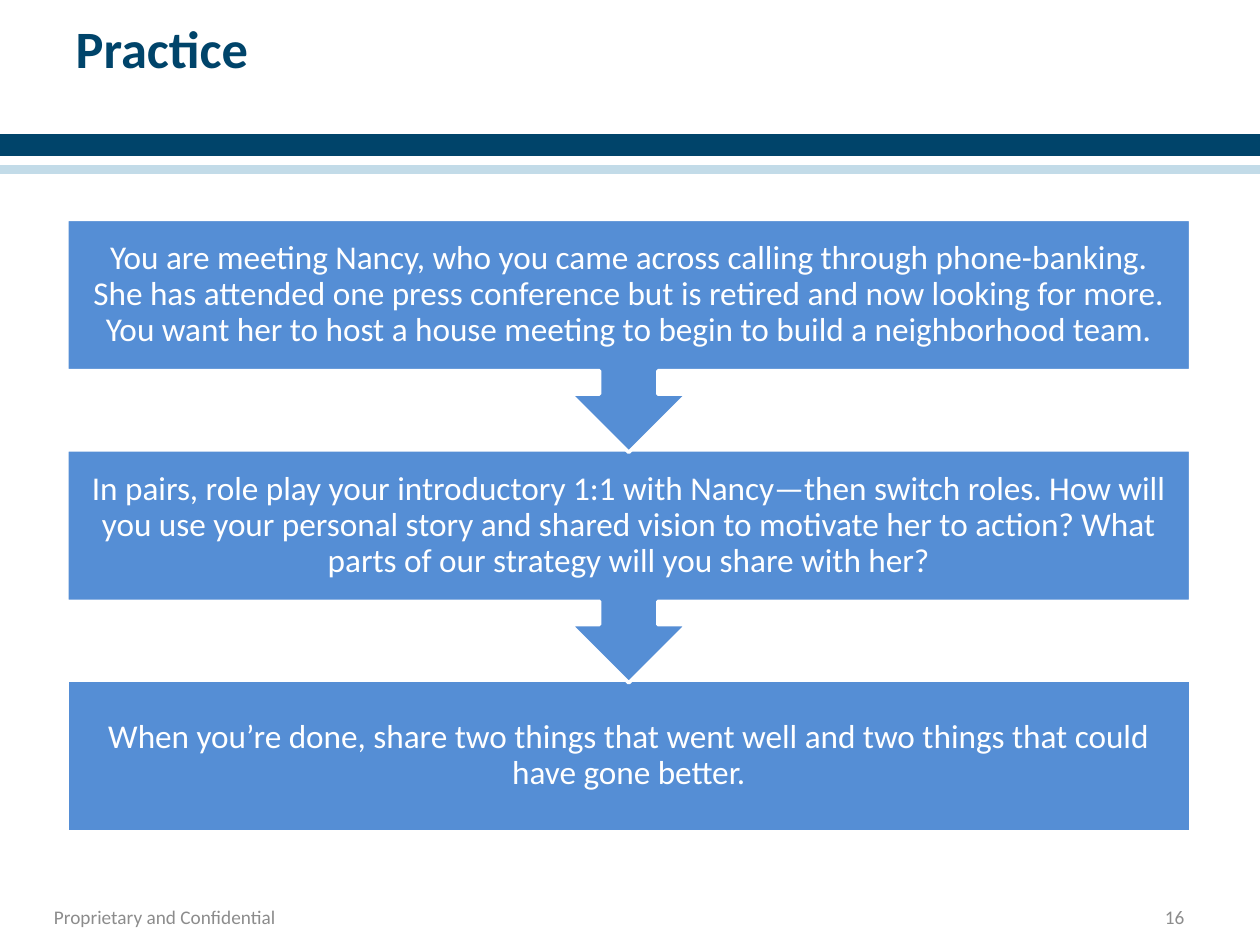
"""Build the role-play practice slide: three steps linked by arrows."""
from dataclasses import dataclass
from typing import Optional

from pptx import Presentation
from pptx.dml.color import RGBColor
from pptx.enum.shapes import MSO_SHAPE
from pptx.enum.text import MSO_ANCHOR, MSO_AUTO_SIZE, PP_ALIGN
from pptx.shapes.autoshape import Shape
from pptx.slide import Slide
from pptx.text.text import TextFrame
from pptx.util import Inches, Pt


@dataclass(frozen=True)
class Theme:
    font: str = "Calibri"
    navy: str = "00446A"
    pale: str = "C2DBE8"
    blue: str = "558ED5"
    white: str = "FFFFFF"
    gray: str = "8C8C8C"
    title_size: int = 30
    step_size: int = 19
    footer_size: int = 11
    line_width: int = 2


@dataclass(frozen=True)
class Area:
    left: float
    top: float
    width: float
    height: float

    def lengths(self) -> list[int]:
        return [Inches(side) for side in (self.left, self.top, self.width, self.height)]


@dataclass(frozen=True)
class Band:
    top: float
    height: float
    color: str


@dataclass(frozen=True)
class Footer:
    text: str
    area: Area
    align: PP_ALIGN


THEME = Theme()
STEP_TOP, STEP_PITCH = 1.74, 1.83
STEP_LEFT, STEP_WIDTH = 0.53, 8.92
BODY_HEIGHT, CALLOUT_HEIGHT = 1.2, 1.85

BANDS = [
    Band(1.08, 0.25, THEME.navy),
    Band(1.25, 0.05, THEME.white),
    Band(1.32, 0.05, THEME.pale),
]
FOOTERS = [
    Footer("Proprietary and Confidential", Area(0.33, 7.1, 2.57, 0.35), PP_ALIGN.LEFT),
    Footer("16", Area(7.17, 7.1, 2.33, 0.35), PP_ALIGN.RIGHT),
]
STEPS = [
    "You are meeting Nancy, who you came across calling through phone-banking. "
    "She has attended one press conference but is retired and now looking for more. "
    "You want her to host a house meeting to begin to build a neighborhood team.",
    "In pairs, role play your introductory 1:1 with Nancy—then switch roles. "
    "How will you use your personal story and shared vision to motivate her to action? "
    "What parts of our strategy will you share with her?",
    "When you’re done, share two things that went well and two things "
    "that could have gone better.",
]


def write(frame: TextFrame, text: str, size: int, color: str, align: PP_ALIGN,
          anchor: MSO_ANCHOR = MSO_ANCHOR.MIDDLE, bold: bool = False,
          inset: Optional[float] = None) -> None:
    frame.word_wrap = True
    frame.auto_size = MSO_AUTO_SIZE.NONE
    frame.vertical_anchor = anchor
    if inset is not None:
        frame.margin_left = frame.margin_right = Inches(inset)
        frame.margin_top = frame.margin_bottom = Inches(inset)
    frame.text = text
    para = frame.paragraphs[0]
    para.alignment = align
    para.font.name = THEME.font
    para.font.size = Pt(size)
    para.font.bold = bold
    para.font.color.rgb = RGBColor.from_string(color)


def draw_shape(page: Slide, kind: MSO_SHAPE, area: Area, fill: str, line: str) -> Shape:
    shape = page.shapes.add_shape(kind, *area.lengths())
    shape.shadow.inherit = False
    shape.fill.solid()
    shape.fill.fore_color.rgb = RGBColor.from_string(fill)
    shape.line.color.rgb = RGBColor.from_string(line)
    shape.line.width = Pt(THEME.line_width)
    return shape


def draw_title(page: Slide, text: str) -> None:
    title = page.shapes.title
    title.left, title.top, title.width, title.height = Area(0.5, 0.08, 9, 1.25).lengths()
    write(title.text_frame, text, THEME.title_size, THEME.navy, PP_ALIGN.LEFT,
          MSO_ANCHOR.TOP, bold=True)


def draw_footer(page: Slide, footer: Footer) -> None:
    box = page.shapes.add_textbox(*footer.area.lengths())
    write(box.text_frame, footer.text, THEME.footer_size, THEME.gray, footer.align)


def draw_step(page: Slide, index: int, text: str) -> None:
    last = index == len(STEPS) - 1
    kind = MSO_SHAPE.RECTANGLE if last else MSO_SHAPE.DOWN_ARROW_CALLOUT
    height = BODY_HEIGHT if last else CALLOUT_HEIGHT
    area = Area(STEP_LEFT, STEP_TOP + index * STEP_PITCH, STEP_WIDTH, height)
    step = draw_shape(page, kind, area, THEME.blue, THEME.white)
    write(step.text_frame, text, THEME.step_size, THEME.white, PP_ALIGN.CENTER, inset=0.15)
    step.text_frame.paragraphs[0].line_spacing = 0.9


def main() -> None:
    deck = Presentation()
    deck.slide_width, deck.slide_height = Inches(10), Inches(7.5)
    page = deck.slides.add_slide(deck.slide_layouts[5])
    for band in BANDS:
        area = Area(0, band.top, 10, band.height)
        draw_shape(page, MSO_SHAPE.RECTANGLE, area, band.color, band.color)
    draw_title(page, "Practice")
    for footer in FOOTERS:
        draw_footer(page, footer)
    for index, text in reversed(list(enumerate(STEPS))):
        draw_step(page, index, text)
    deck.save("out.pptx")


if __name__ == "__main__":
    main()
